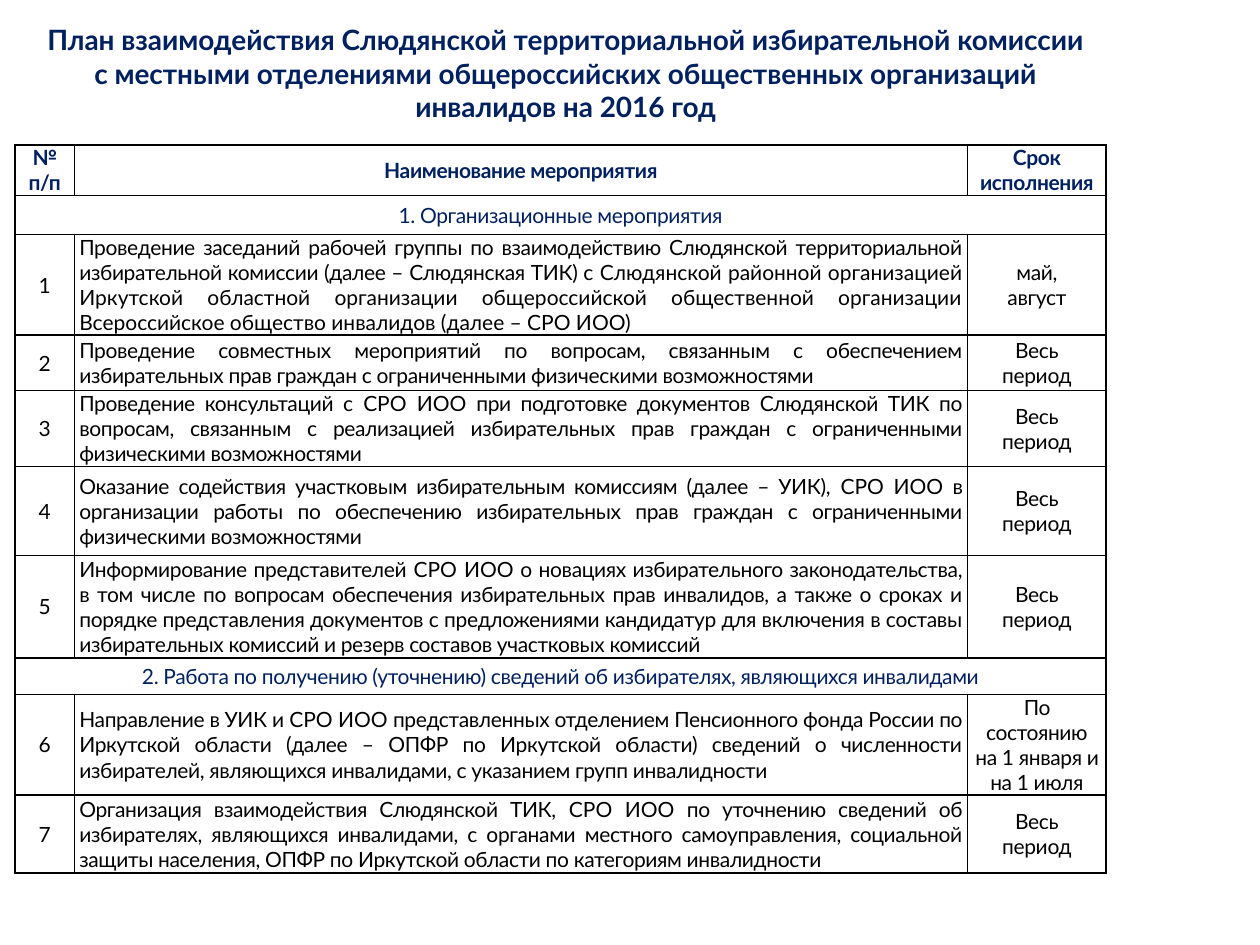
from lxml.etree import SubElement
from pptx import Presentation
from pptx.dml.color import RGBColor
from pptx.enum.text import MSO_ANCHOR as Anchor, PP_ALIGN as Align
from pptx.oxml.ns import qn
from pptx.util import Inches, Pt

NAVY = RGBColor(0x00, 0x20, 0x60)
BLACK = RGBColor(0x00, 0x00, 0x00)
FONT = "Lato"
TIGHT = -20

TITLE = ("План взаимодействия Слюдянской территориальной избирательной комиссии "
         "с местными отделениями общероссийских общественных организаций "
         "инвалидов на 2016 год")
HEADERS = ["№\nп/п", "Наименование мероприятия", "Срок\nисполнения"]
ANY_TIME = "Весь\nпериод"
# A bar switches between tight and normal letter spacing.
SECTIONS = [
    ("1. Организационные мероприятия", [
        ("Проведение заседаний рабочей группы по взаимодействию Слюдянской "
         "территориальной избирательной комиссии (далее – Слюдянская ТИК) с "
         "|Слюдянской районной организацией Иркутской областной организации "
         "общероссийской общественной организации Всероссийское общество "
         "инвалидов (далее – СРО ИОО)", "май,\nавгуст"),
        ("Проведение совместных мероприятий по вопросам, связанным с обеспечением "
         "избирательных прав граждан с ограниченными физическими возможностями",
         ANY_TIME),
        ("Проведение консультаций с |СРО ИОО| при подготовке документов "
         "Слюдянской ТИК по вопросам, связанным с реализацией избирательных прав "
         "граждан с ограниченными физическими возможностями", ANY_TIME),
        ("Оказание содействия участковым избирательным комиссиям (далее – УИК), "
         "|СРО ИОО| в организации работы по обеспечению избирательных прав "
         "граждан с ограниченными физическими возможностями", ANY_TIME),
        ("Информирование представителей |СРО ИОО| о новациях избирательного "
         "законодательства, в том числе по вопросам обеспечения избирательных "
         "прав инвалидов, а также о сроках и порядке представления документов с "
         "предложениями кандидатур для включения в составы избирательных "
         "комиссий и резерв составов участковых комиссий", ANY_TIME),
    ]),
    ("2. Работа по получению (уточнению) сведений об избирателях, "
     "являющихся инвалидами", [
        ("Направление в УИК и |СРО ИОО| представленных отделением Пенсионного "
         "фонда России по Иркутской области (далее – ОПФР по Иркутской области) "
         "сведений о численности избирателей, являющихся инвалидами, с указанием "
         "групп инвалидности", "По состоянию\nна 1 января и на 1 июля"),
        ("Организация взаимодействия Слюдянской ТИК, |СРО ИОО| по уточнению "
         "сведений об избирателях, являющихся инвалидами, с органами местного "
         "самоуправления, социальной защиты населения, ОПФР по Иркутской области "
         "по категориям инвалидности", ANY_TIME),
    ]),
]
COLUMN_WIDTHS = [0.47, 7.09, 1.1]
ROW_HEIGHTS = [0.39, 0.31, 0.8, 0.44, 0.59, 0.71, 0.81, 0.29, 0.78, 0.62]


def write_text(frame, text, size=12, color=BLACK, bold=False,
               align=Align.CENTER, spacing=TIGHT):
    for index, line in enumerate(text.split("\n")):
        para = frame.paragraphs[0] if index == 0 else frame.add_paragraph()
        para.alignment = align
        for part, words in enumerate(line.split("|")):
            span = para.add_run()
            span.text = words
            span.font.name = FONT
            span.font.size = Pt(size)
            span.font.bold = bold
            span.font.color.rgb = color
            span.font._element.set("spc", str(0 if part % 2 else spacing))


def add_borders(cell):
    properties = cell._tc.get_or_add_tcPr()
    for side in ("a:lnL", "a:lnR", "a:lnT", "a:lnB"):
        line = SubElement(properties, qn(side), w=str(Pt(1)))
        fill = SubElement(line, qn("a:solidFill"))
        SubElement(fill, qn("a:srgbClr"), val=str(BLACK))


def format_cell(cell):
    cell.vertical_anchor = Anchor.MIDDLE
    cell.margin_left = cell.margin_right = Inches(0.04)
    cell.margin_top = cell.margin_bottom = 0
    add_borders(cell)
    cell.fill.background()


def add_title(page, left, top, width, height):
    box = page.shapes.add_textbox(left, top, width, height)
    box.text_frame.word_wrap = True
    write_text(box.text_frame, TITLE, size=16, color=NAVY, bold=True, spacing=0)


def add_plan(page, left, top, width, height):
    table = page.shapes.add_table(
        len(ROW_HEIGHTS), len(COLUMN_WIDTHS), left, top, width, height).table
    table.first_row = table.horz_banding = False
    for column, size in zip(table.columns, COLUMN_WIDTHS):
        column.width = Inches(size)
    for row, size in zip(table.rows, ROW_HEIGHTS):
        row.height = Inches(size)
    for cell in table.iter_cells():
        format_cell(cell)

    for column, header in enumerate(HEADERS):
        write_text(table.cell(0, column).text_frame, header, color=NAVY, bold=True)
    row, number = 1, 1
    for heading, events in SECTIONS:
        table.cell(row, 0).merge(table.cell(row, 2))
        write_text(table.cell(row, 0).text_frame, heading, color=NAVY)
        row += 1
        for event, term in events:
            write_text(table.cell(row, 0).text_frame, str(number))
            write_text(table.cell(row, 1).text_frame, event, align=Align.JUSTIFY)
            write_text(table.cell(row, 2).text_frame, term)
            row, number = row + 1, number + 1


def main():
    deck = Presentation()
    deck.slide_width, deck.slide_height = Inches(10), Inches(7.5)
    page = deck.slides.add_slide(deck.slide_layouts[6])
    add_title(page, Inches(0.2), Inches(0.13), Inches(8.58), Inches(0.95))
    add_plan(page, Inches(0.12), Inches(1.15), Inches(8.66), Inches(5.74))
    deck.save("out.pptx")


if __name__ == "__main__":
    main()
